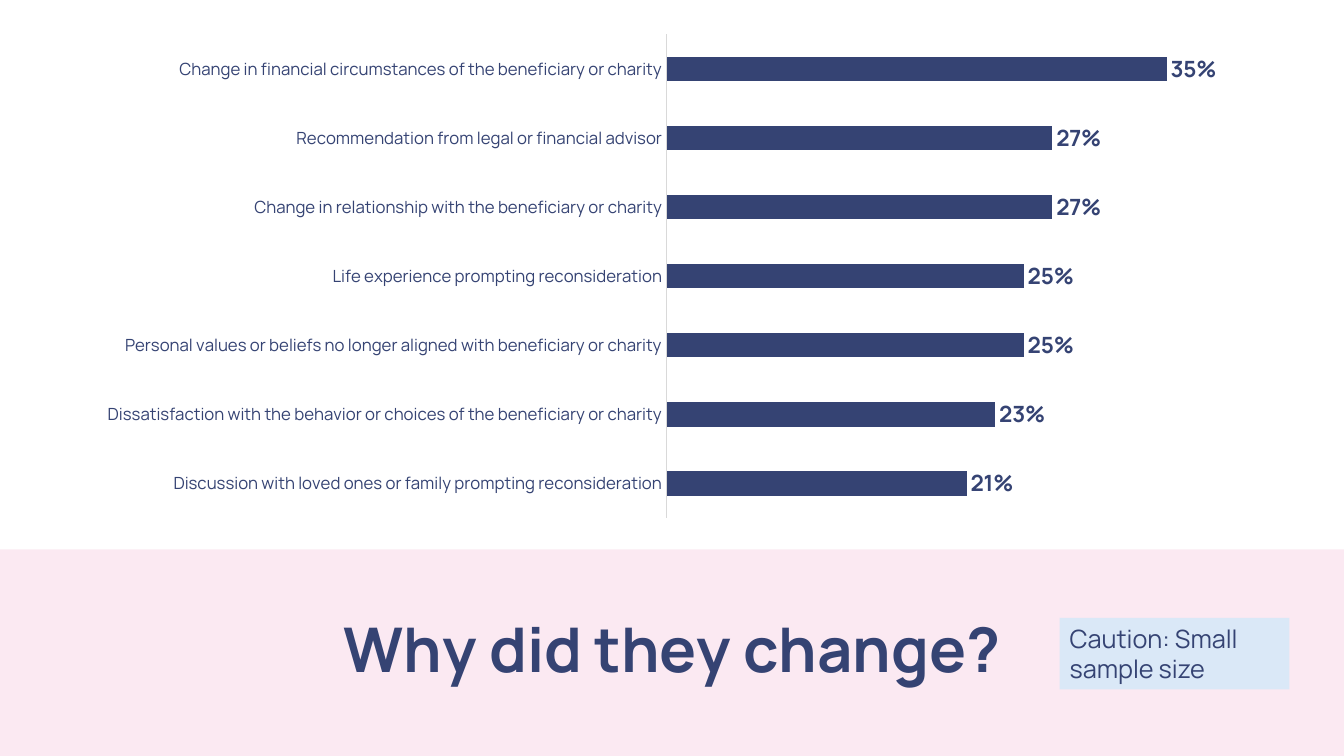
from lxml.etree import SubElement
from pptx import Presentation
from pptx.chart.data import CategoryChartData
from pptx.dml.color import RGBColor
from pptx.enum.chart import XL_CHART_TYPE, XL_LABEL_POSITION, XL_TICK_LABEL_POSITION, XL_TICK_MARK
from pptx.enum.shapes import MSO_SHAPE
from pptx.enum.text import MSO_ANCHOR, PP_ALIGN
from pptx.oxml.ns import qn
from pptx.util import Inches, Pt

NAVY = RGBColor(0x35, 0x43, 0x73)
PINK = RGBColor(0xF7, 0xCA, 0xDF)
SKY = RGBColor(0xCC, 0xE8, 0xFA)
GREY = RGBColor(0xD9, 0xD9, 0xD9)
FONT = "Manrope"
PERCENT = "#,##0%"

REASONS = [
    ("Discussion with loved ones or family prompting reconsideration", 0.21),
    ("Dissatisfaction with the behavior or choices of the beneficiary or charity", 0.23),
    ("Personal values or beliefs no longer aligned with beneficiary or charity", 0.25),
    ("Life experience prompting reconsideration", 0.25),
    ("Change in relationship with the beneficiary or charity", 0.27),
    ("Recommendation from legal or financial advisor", 0.27),
    ("Change in financial circumstances of the beneficiary or charity", 0.35),
]


def style_font(font, size, bold=False):
    font.name = FONT
    font.size = Pt(size)
    font.bold = bold
    font.color.rgb = NAVY


def add_panel(slide, left, top, width, height, color, opacity):
    sp = slide.shapes.add_shape(MSO_SHAPE.RECTANGLE, Inches(left), Inches(top),
                                Inches(width), Inches(height))
    sp.shadow.inherit = False
    sp.line.fill.background()
    sp.fill.solid()
    sp.fill.fore_color.rgb = color
    clr = sp.fill._xPr.find(qn("a:solidFill")).find(qn("a:srgbClr"))
    SubElement(clr, qn("a:alpha"), val=str(opacity * 1000))
    return sp


def write_text(sp, text, size, align, anchor, bold=False):
    tf = sp.text_frame
    tf.word_wrap = True
    tf.vertical_anchor = anchor
    tf.text = text
    p = tf.paragraphs[0]
    p.alignment = align
    style_font(p.runs[0].font, size, bold)
    return p


def set_plot_layout(chart, **fractions):
    plot_area = chart._chartSpace.chart.plotArea
    layout = plot_area.find(qn("c:layout"))
    if layout is None:
        layout = SubElement(plot_area, qn("c:layout"))
        plot_area.insert(0, layout)
    manual = SubElement(layout, qn("c:manualLayout"))
    SubElement(manual, qn("c:layoutTarget"), val="inner")
    for key in ("xMode", "yMode"):
        SubElement(manual, qn(f"c:{key}"), val="edge")
    for key, value in fractions.items():
        SubElement(manual, qn(f"c:{key}"), val=str(value))


def add_reasons_chart(slide):
    data = CategoryChartData(number_format=PERCENT)
    data.categories = [reason for reason, _ in REASONS]
    data.add_series("Series 1", [share for _, share in REASONS])
    chart = slide.shapes.add_chart(XL_CHART_TYPE.BAR_CLUSTERED, Inches(0.85), Inches(0.23),
                                   Inches(11.64), Inches(5.01), data).chart
    chart.has_legend = False
    chart.has_title = False
    style_font(chart.font, 10)
    set_plot_layout(chart, x=0.495, y=0.022, w=0.487, h=0.958)

    axis = chart.category_axis
    axis.major_tick_mark = XL_TICK_MARK.NONE
    axis.format.line.color.rgb = GREY
    axis.format.line.width = Pt(0.75)
    style_font(axis.tick_labels.font, 12)

    scale = chart.value_axis
    scale.minimum_scale = 0
    scale.maximum_scale = 0.4
    scale.has_major_gridlines = False
    scale.tick_label_position = XL_TICK_LABEL_POSITION.NONE
    scale.visible = False

    plot = chart.plots[0]
    plot.gap_width = 182
    plot.vary_by_categories = False
    fill = plot.series[0].format.fill
    fill.solid()
    fill.fore_color.rgb = NAVY
    labels = plot.series[0].data_labels
    labels.show_value = True
    labels.position = XL_LABEL_POSITION.OUTSIDE_END
    labels.number_format = PERCENT
    labels.number_format_is_linked = False
    style_font(labels.font, 16, bold=True)


def add_title(slide, text):
    title = slide.shapes.title
    title.left, title.top = Inches(0.92), Inches(5.68)
    title.width, title.height = Inches(11.5), Inches(1.59)
    p = write_text(title, text, 44, PP_ALIGN.CENTER, MSO_ANCHOR.MIDDLE, bold=True)
    p.line_spacing = 0.9


def main():
    prs = Presentation()
    prs.slide_width, prs.slide_height = Inches(13.33), Inches(7.5)
    slide = prs.slides.add_slide(prs.slide_layouts[5])
    add_panel(slide, 0, 5.45, 13.33, 2.05, PINK, 40)
    add_reasons_chart(slide)
    caution = add_panel(slide, 10.51, 6.13, 2.28, 0.71, SKY, 70)
    write_text(caution, "Caution: Small sample size", 18, PP_ALIGN.LEFT, MSO_ANCHOR.TOP)
    add_title(slide, "Why did they change?")
    slide.shapes._spTree.append(slide.shapes.title._element)
    prs.save("out.pptx")


if __name__ == "__main__":
    main()
